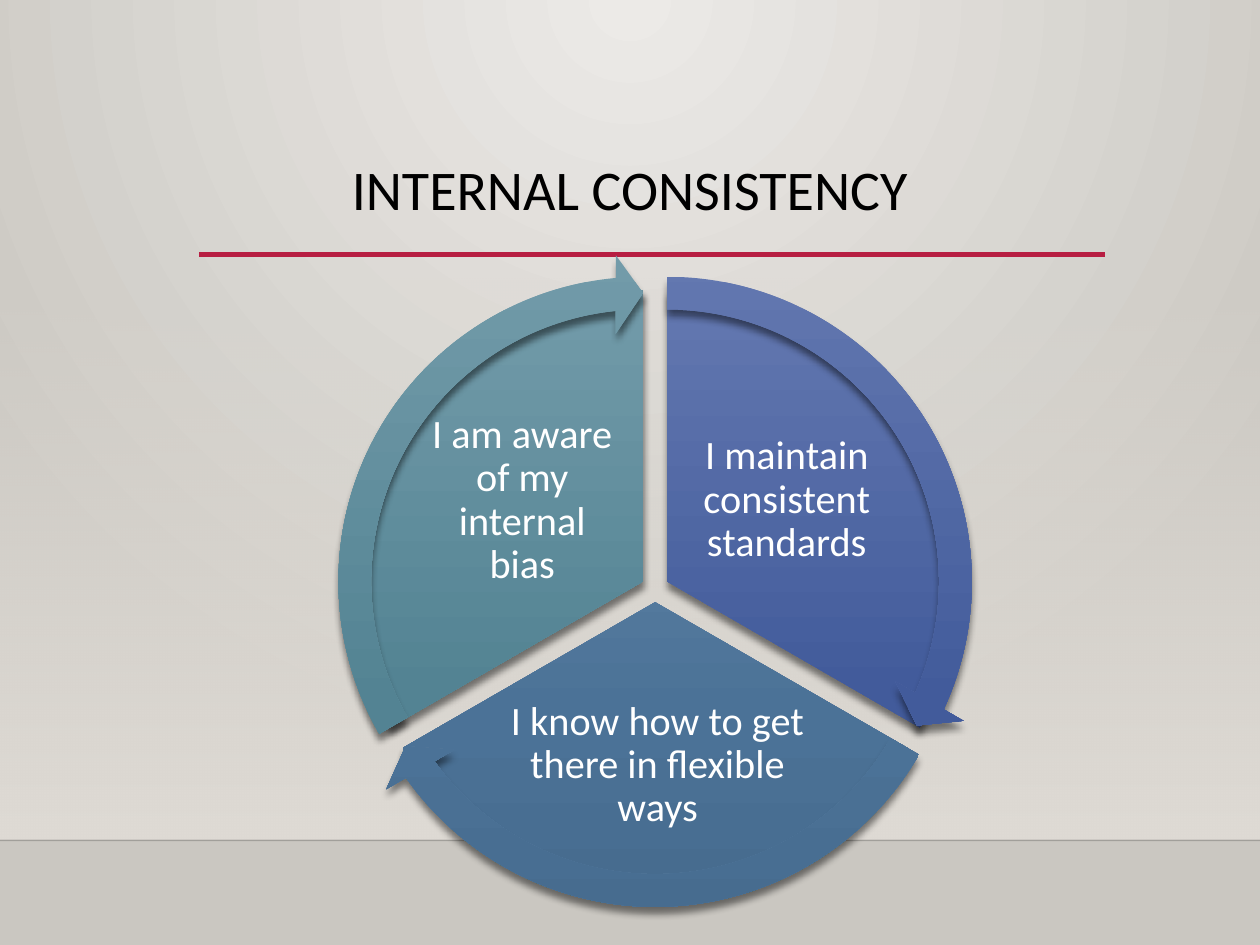
from math import cos, radians, sin

from lxml import etree
from pptx import Presentation
from pptx.dml.color import RGBColor
from pptx.enum import shapes as sh, text as tx
from pptx.oxml.ns import qn
from pptx.util import Inches, Pt

BLACK = RGBColor(0, 0, 0)
WHITE = RGBColor(255, 255, 255)
RED = RGBColor(0xB7, 0x1E, 0x42)
SAND = RGBColor(0xDF, 0xDB, 0xD5)
PALE = RGBColor(0xEC, 0xEA, 0xE7)
STONE = RGBColor(0xCA, 0xC7, 0xC1)
BLUES = [RGBColor(0x63, 0x78, 0xB0), RGBColor(0x42, 0x5B, 0x9B), RGBColor(0x3F, 0x57, 0x93)]
STEELS = [RGBColor(0x6A, 0x8C, 0xAD), RGBColor(0x4B, 0x72, 0x97), RGBColor(0x47, 0x6C, 0x8F)]
TEALS = [RGBColor(0x72, 0x9B, 0xA9), RGBColor(0x53, 0x83, 0x93), RGBColor(0x4F, 0x7C, 0x8B)]

TITLE = "INTERNAL CONSISTENCY"
# text, text box, colours, middle angle, pie angles, arrow angles
PARTS = [
    ("I maintain consistent standards", (5.42, 3.28, 1.65, 1.38), BLUES,
     -30, (162, 18), (14.72, 161.99)),
    ("I know how to get there in flexible ways", (3.98, 5.47, 2.48, 1.21), STEELS,
     90, (18, 90), (86.72, 18.01)),
    ("I am aware of my internal bias", (3.32, 3.28, 1.65, 1.38), TEALS,
     210, (90, 162), (158.73, 90)),
]
HUB = (5.2, 4.67)
PUSH = 0.11
PIE, RING = 4.63, 5.2


def node(parent, tag, **attrs):
    return etree.SubElement(parent, qn(tag), {k: str(v) for k, v in attrs.items()})


def fade(grad, stops, round_top=False):
    """Fill a gradFill element with (percent, colour, opacity) stops."""
    for child in list(grad):
        grad.remove(child)
    group = node(grad, "a:gsLst")
    for pos, color, alpha in stops:
        stop = node(group, "a:gs", pos=pos * 1000)
        tint = node(stop, "a:srgbClr", val=color)
        if alpha < 100:
            node(tint, "a:alpha", val=alpha * 1000)
    if round_top:
        way = node(grad, "a:path")
        way.set("path", "circle")
        node(way, "a:fillToRect", l=43000, t=0, r=43000, b=100000)
    else:
        node(grad, "a:lin", ang=5400000, scaled=0)


def add_form(slide, kind, box, stops, adjust=(), shadow=False):
    form = slide.shapes.add_shape(kind, *map(Inches, box))
    for i, value in enumerate(adjust):
        form.adjustments[i] = value
    form.line.fill.background()
    form.fill.gradient()
    props = form._element.spPr
    fade(props.find(qn("a:gradFill")), stops)
    form.shadow.inherit = False
    if shadow:
        cast = node(props.find(qn("a:effectLst")), "a:outerShdw", blurRad=Pt(4),
                    dist=Pt(4), dir=5400000, rotWithShape=0)
        node(node(cast, "a:srgbClr", val=BLACK), "a:alpha", val=48000)


def add_line(slide, left, right, top, color, width, alpha=100):
    line = slide.shapes.add_connector(sh.MSO_CONNECTOR.STRAIGHT, Inches(left), Inches(top),
                                      Inches(right), Inches(top))
    line.line.color.rgb = color
    line.line.width = Pt(width)
    props = line._element.spPr
    if alpha < 100:
        node(props.find(".//" + qn("a:srgbClr")), "a:alpha", val=alpha * 1000)
    node(props, "a:effectLst")


def add_text(slide, words, box, size, color, anchor=tx.MSO_ANCHOR.MIDDLE, inset=0.03):
    frame = slide.shapes.add_textbox(*map(Inches, box)).text_frame
    frame.word_wrap = True
    frame.vertical_anchor = anchor
    frame.margin_left = frame.margin_right = Inches(inset)
    frame.margin_top = frame.margin_bottom = Inches(inset)
    para = frame.paragraphs[0]
    para.alignment = tx.PP_ALIGN.CENTER
    para.line_spacing = 0.9
    run = para.add_run()
    run.text = words
    run.font.name = "Calibri"
    run.font.size = Pt(size)
    run.font.color.rgb = color


def around(angle, size):
    """Square box whose centre is pushed out from the hub."""
    x = HUB[0] + PUSH * cos(radians(angle)) - size / 2
    y = HUB[1] + PUSH * sin(radians(angle)) - size / 2
    return x, y, size, size


def shades(colors):
    return [(pos, color, 100) for pos, color in zip((0, 69, 100), colors)]


def main():
    deck = Presentation()
    deck.slide_width, deck.slide_height = Inches(10), Inches(7.5)
    slide = deck.slides.add_slide(deck.slide_layouts[6])

    slide.background.fill.gradient()
    fade(slide._element.find(".//" + qn("a:gradFill")),
         [(0, PALE, 100), (100, STONE, 100)], round_top=True)
    add_form(slide, sh.MSO_SHAPE.RECTANGLE, (0, 2.2, 10, 4.46),
             [(0, SAND, 0), (100, SAND, 100)])
    add_line(slide, 0, 10, 6.67, BLACK, 1, alpha=20)
    add_line(slide, 1.58, 8.77, 2.02, RED, 2.5)
    add_text(slide, TITLE, (0.75, 1.24, 8.5, 1.25), 32, BLACK,
             anchor=tx.MSO_ANCHOR.TOP, inset=0.05)

    for words, box, colors, angle, slice_ends, _ in PARTS:
        add_form(slide, sh.MSO_SHAPE.PIE, around(angle, PIE), shades(colors),
                 slice_ends, shadow=True)
        add_text(slide, words, box, 23, WHITE)
    for _, _, colors, angle, _, (head, tail) in PARTS:
        add_form(slide, sh.MSO_SHAPE.CIRCULAR_ARROW, around(angle, RING), shades(colors),
                 (0.05, 3.28, head, tail, 0.06), shadow=True)
    deck.save("out.pptx")


if __name__ == "__main__":
    main()
